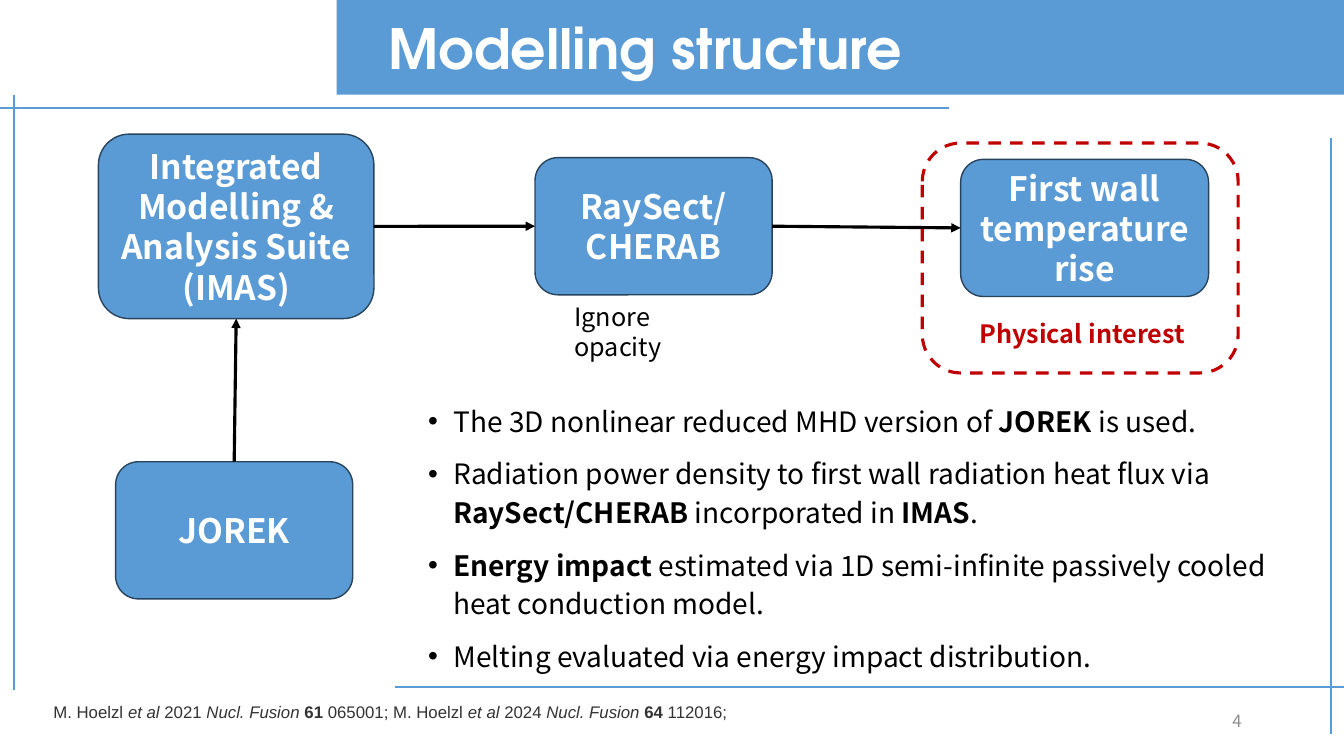
import pptx
import pptx.dml.color
import pptx.enum.dml
import pptx.enum.shapes
import pptx.enum.text
import pptx.oxml
import pptx.oxml.ns
import pptx.util

Pt = pptx.util.Pt
Shapes = pptx.enum.shapes.MSO_SHAPE
Align = pptx.enum.text.PP_ALIGN
Anchor = pptx.enum.text.MSO_ANCHOR
BLUE, NAVY, RED = "5B9BD5", "28445D", "C00000"
BLACK, WHITE, GREY, DARK = "000000", "FFFFFF", "8C8C8C", "333333"
BODY, TITLE, CITATION = "Noto Sans CJK SC", "TeX Gyre Adventor", "Arial"
TOP, LEFT, BOTTOM, RIGHT = range(4)  # connection sites


def color(hex_string):
    return pptx.dml.color.RGBColor.from_string(hex_string)


def add_element(parent, tag, **attributes):
    element = pptx.oxml.parse_xml(f"<a:{tag} {pptx.oxml.ns.nsdecls('a')}/>")
    for name, value in attributes.items():
        element.set(name, value)
    parent.append(element)


class SlideBuilder:
    def __init__(self, slide):
        self.shapes = slide.shapes

    def add_runs(self, paragraph, runs, size, hex_string, font=BODY):
        """Each run is a text and its style: "b" bold, "i" italic or ""."""
        for text, style in runs:
            run = paragraph.add_run()
            run.text = text
            run.font.name = font
            run.font.size = Pt(size)
            run.font.color.rgb = color(hex_string)
            run.font.bold = "b" in style
            run.font.italic = "i" in style

    def shape(self, kind, box, fill=None, line=None, width=1):
        shape = self.shapes.add_shape(kind, *map(Pt, box))
        shape.shadow.inherit = False
        if fill:
            shape.fill.solid()
            shape.fill.fore_color.rgb = color(fill)
        else:
            shape.fill.background()
        if line:
            shape.line.color.rgb = color(line)
            shape.line.width = Pt(width)
        else:
            shape.line.fill.background()
        return shape

    def node(self, box, *lines):
        node = self.shape(Shapes.ROUNDED_RECTANGLE, box, BLUE, NAVY)
        frame = node.text_frame
        frame.word_wrap = True
        frame.vertical_anchor = Anchor.MIDDLE
        frame.text = "\n".join(lines)
        for paragraph in frame.paragraphs:
            paragraph.alignment = Align.CENTER
            for run in paragraph.runs:
                run.font.name = BODY
                run.font.size = Pt(24)
                run.font.bold = True
                run.font.color.rgb = color(WHITE)
        return node

    def line(self, start, end, hex_string=BLUE, width=1.5):
        connector = self.shapes.add_connector(
            pptx.enum.shapes.MSO_CONNECTOR.STRAIGHT, *map(Pt, start + end))
        connector.line.color.rgb = color(hex_string)
        connector.line.width = Pt(width)
        add_element(connector._element.spPr, "effectLst")
        return connector

    def arrow(self, source, source_site, target, target_site):
        connector = self.line((0, 0), (0, 0), BLACK, 2.25)
        connector.begin_connect(source, source_site)
        connector.end_connect(target, target_site)
        add_element(connector.line._get_or_add_ln(), "tailEnd", type="triangle")

    def text(self, box, runs, size, hex_string, font=BODY, anchor=Anchor.TOP,
             align=Align.LEFT, wrap=True):
        frame = self.shapes.add_textbox(*map(Pt, box)).text_frame
        frame.word_wrap = wrap
        frame.vertical_anchor = anchor
        paragraph = frame.paragraphs[0]
        paragraph.alignment = align
        self.add_runs(paragraph, runs, size, hex_string, font)
        return paragraph

    def bullets(self, box, items):
        frame = self.shapes.add_textbox(*map(Pt, box)).text_frame
        frame.word_wrap = True
        for index, runs in enumerate(items):
            paragraph = frame.add_paragraph() if index else frame.paragraphs[0]
            paragraph.line_spacing = 1.15
            paragraph.space_before = Pt(10 if index else 0)
            properties = paragraph._p.get_or_add_pPr()
            properties.set("marL", str(Pt(18)))
            properties.set("indent", str(-Pt(18)))
            add_element(properties, "buFont", typeface="Arial")
            add_element(properties, "buChar", char="•")
            self.add_runs(paragraph, runs, 20, BLACK)


def main():
    presentation = pptx.Presentation()
    presentation.slide_width = Pt(960)
    presentation.slide_height = Pt(540)
    builder = SlideBuilder(
        presentation.slides.add_slide(presentation.slide_layouts[6]))

    # Title band and frame lines
    builder.shape(Shapes.RECTANGLE, (240.5, 0, 719.5, 67.7), BLUE)
    for start, end in (((0, 77), (678, 77)), ((10, 67.7), (10, 493)),
                       ((951, 98.6), (951, 524)), ((282, 491), (960, 491))):
        builder.line(start, end)
    title = builder.text((270.7, 13.7, 658.8, 46.8), [("Modelling structure", "b")],
                         39.6, WHITE, TITLE, Anchor.MIDDLE)
    title.line_spacing = 0.9
    builder.text((678, 500.4, 216, 28.8), [("4", "")], 12, GREY,
                 anchor=Anchor.MIDDLE, align=Align.RIGHT)

    # Workflow
    jorek = builder.node((82.6, 329.8, 169.4, 98), "JOREK")
    imas = builder.node((70.3, 95.8, 196.8, 131.8),
                        "Integrated Modelling & Analysis Suite (IMAS)")
    raysect = builder.node((382.2, 112.6, 169.4, 98), "RaySect/", "CHERAB")
    wall = builder.node((686.2, 113.8, 177.1, 98), "First wall temperature rise")
    builder.arrow(jorek, TOP, imas, BOTTOM)
    builder.arrow(imas, RIGHT, raysect, LEFT)
    builder.arrow(raysect, RIGHT, wall, LEFT)

    # Quantity of interest
    interest = builder.shape(Shapes.ROUNDED_RECTANGLE, (658.8, 102.2, 225.6, 164.2),
                             line=RED, width=2.25)
    interest.line.dash_style = pptx.enum.dml.MSO_LINE.DASH
    builder.text((692.6, 223.9, 164.2, 28.8), [("Physical interest", "b")],
                 18, RED, wrap=False)

    # Explanation
    builder.bullets((298.8, 281.5, 621.4, 205.9), [
        [("The 3D nonlinear reduced MHD version of ", ""), ("JOREK ", "b"),
         ("is used.", "")],
        [("Radiation power density to first wall radiation heat flux via ", ""),
         ("RaySect/CHERAB ", "b"), ("incorporated in ", ""), ("IMAS", "b"),
         (".", "")],
        [("Energy impact ", "b"),
         ("estimated via 1D semi-infinite passively cooled heat conduction model.",
          "")],
        [("Melting evaluated via energy impact distribution.", "")],
    ])

    # Citation and remark
    builder.text((31, 497.5, 536.4, 21.6), [
        ("M. Hoelzl ", ""), ("et al", "i"), (" 2021 ", ""), ("Nucl. Fusion ", "i"),
        ("61", "b"), (" 065001; M. Hoelzl ", ""), ("et al", "i"), (" 2024 ", ""),
        ("Nucl. Fusion ", "i"), ("64 ", "b"), ("112016;", ""),
    ], 12, DARK, CITATION)
    builder.text((403.2, 211.7, 126.7, 28.8), [("Ignore opacity", "")], 18, BLACK)

    presentation.save("out.pptx")


if __name__ == "__main__":
    main()
